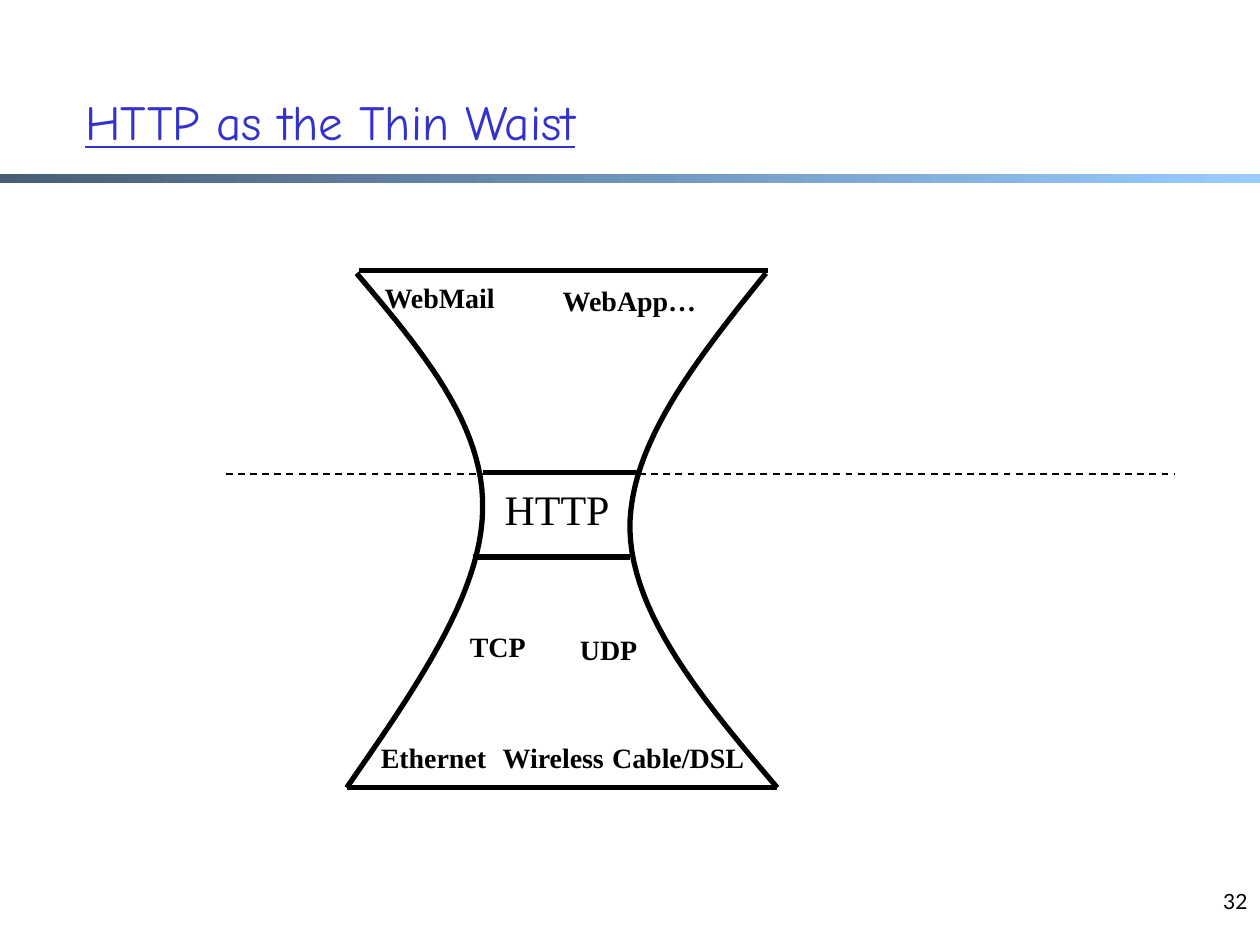
"""Build a slide showing HTTP as the thin waist of the protocol hourglass."""
from lxml import etree
from pptx import Presentation
from pptx import util as u
from pptx.dml.color import RGBColor
from pptx.enum import dml, shapes, text
from pptx.oxml.ns import qn

BLACK = RGBColor(0x00, 0x00, 0x00)
TITLE_BLUE = RGBColor(0x33, 0x33, 0xCC)
BAND_COLORS = (RGBColor(0x47, 0x5E, 0x76), RGBColor(0x99, 0xCC, 0xFF))
SERIF = "Times New Roman"
LABEL_HEIGHT = 0.94
CURVE_STEPS = 24

TITLE = ("HTTP as the Thin Waist", (1.47, 1.07, 21.59, 2.74))
PAGE_NUMBER = ("32", (19.48, 17.78, 5.92, 1.27))
WAIST = ("HTTP", (9.91, 9.63, 2.64, 1.27))
LABELS = [
    ("Ethernet", 7.42, 14.81, 2.64),
    ("Cable/DSL", 12.07, 14.81, 3.2),
    ("Wireless", 9.86, 14.81, 2.59),
    ("TCP", 9.22, 12.57, 1.63),
    ("UDP", 11.43, 12.62, 1.68),
    ("WebMail", 7.47, 5.54, 2.79),
    ("WebApp…", 11.05, 5.59, 3.28),
]
LEVELS = [
    (9.73, 12.9, 9.53),
    (9.53, 12.7, 11.23),
    (6.99, 15.67, 15.88),
    (7.24, 15.49, 5.46),
]
DIVIDER = (4.55, 23.67, 9.55)
SIDES = [
    [(7.19, 5.51), (8.48, 7.04), (9.78, 8.56), (9.73, 10.29),
     (9.7, 12.01), (8.33, 13.94), (6.99, 15.88)],
    [(15.44, 5.51), (14.05, 7.24), (12.67, 8.97), (12.7, 10.69),
     (12.75, 12.42), (14.2, 14.15), (15.67, 15.88)],
]


def add_text(page, words, place, size, font, color=BLACK, bold=False, underline=False,
             align=text.PP_ALIGN.CENTER, anchor=text.MSO_ANCHOR.TOP, wrap=False):
    box = page.shapes.add_textbox(*map(u.Cm, place))
    frame = box.text_frame
    frame.text = words
    frame.word_wrap = wrap
    frame.vertical_anchor = anchor
    para = frame.paragraphs[0]
    para.alignment = align
    style = para.runs[0].font
    style.name, style.size, style.color.rgb = font, u.Pt(size), color
    style.bold, style.underline = bold, underline


def add_level(page, left, right, top, width=3, dash=None):
    line = page.shapes.add_connector(
        shapes.MSO_CONNECTOR.STRAIGHT, u.Cm(left), u.Cm(top), u.Cm(right), u.Cm(top))
    line.line.color.rgb = BLACK
    line.line.width = u.Pt(width)
    if dash:
        line.line.dash_style = dash
    etree.SubElement(line._element.spPr, qn("a:effectLst"))


def curve_points(controls):
    points = [controls[0]]
    for start in range(0, len(controls) - 1, 3):
        segment = controls[start:start + 4]
        for step in range(1, CURVE_STEPS + 1):
            t = step / CURVE_STEPS
            weights = ((1 - t) ** 3, 3 * t * (1 - t) ** 2, 3 * t ** 2 * (1 - t), t ** 3)
            points.append(tuple(sum(w * p[axis] for w, p in zip(weights, segment))
                                for axis in (0, 1)))
    return [(u.Cm(x), u.Cm(y)) for x, y in points]


def add_side(page, controls):
    first, *rest = curve_points(controls)
    builder = page.shapes.build_freeform(*first)
    builder.add_line_segments(rest, close=False)
    side = builder.convert_to_shape()
    side.shadow.inherit = False
    side.fill.background()
    side.line.color.rgb = BLACK
    side.line.width = u.Pt(3)


def add_band(page, width):
    band = page.shapes.add_shape(
        shapes.MSO_SHAPE.RECTANGLE, 0, u.Cm(3.5), width, u.Cm(0.2))
    band.shadow.inherit = False
    band.line.fill.background()
    band.fill.gradient()
    band.fill.gradient_angle = 0
    for position, (stop, color) in enumerate(zip(band.fill.gradient_stops, BAND_COLORS)):
        stop.position = position
        stop.color.rgb = color


def main():
    deck = Presentation()
    deck.slide_width, deck.slide_height = u.Cm(25.4), u.Cm(19.05)
    page = deck.slides.add_slide(deck.slide_layouts[6])
    add_band(page, deck.slide_width)
    add_text(page, *PAGE_NUMBER, 12, "Lato", align=text.PP_ALIGN.RIGHT, wrap=True)
    add_text(page, *TITLE, 28, "Comic Neue", TITLE_BLUE, underline=True,
             align=text.PP_ALIGN.LEFT, anchor=text.MSO_ANCHOR.MIDDLE, wrap=True)
    add_level(page, *DIVIDER, width=1, dash=dml.MSO_LINE.DASH)
    for controls in SIDES:
        add_side(page, controls)
    for level in LEVELS:
        add_level(page, *level)
    add_text(page, *WAIST, 24, SERIF)
    for words, left, top, width in LABELS:
        add_text(page, words, (left, top, width, LABEL_HEIGHT), 16, SERIF, bold=True)
    deck.save("out.pptx")


if __name__ == "__main__":
    main()
